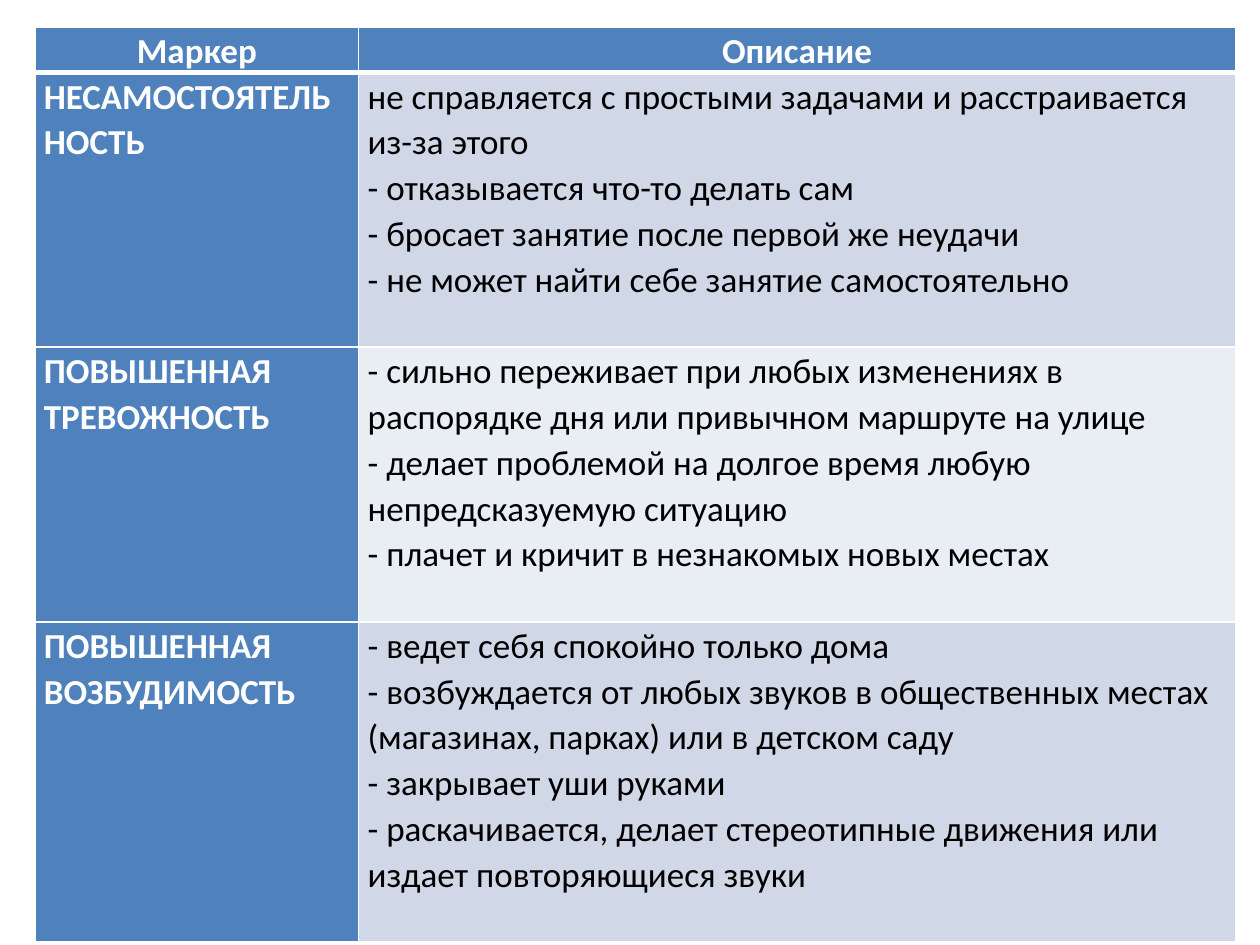
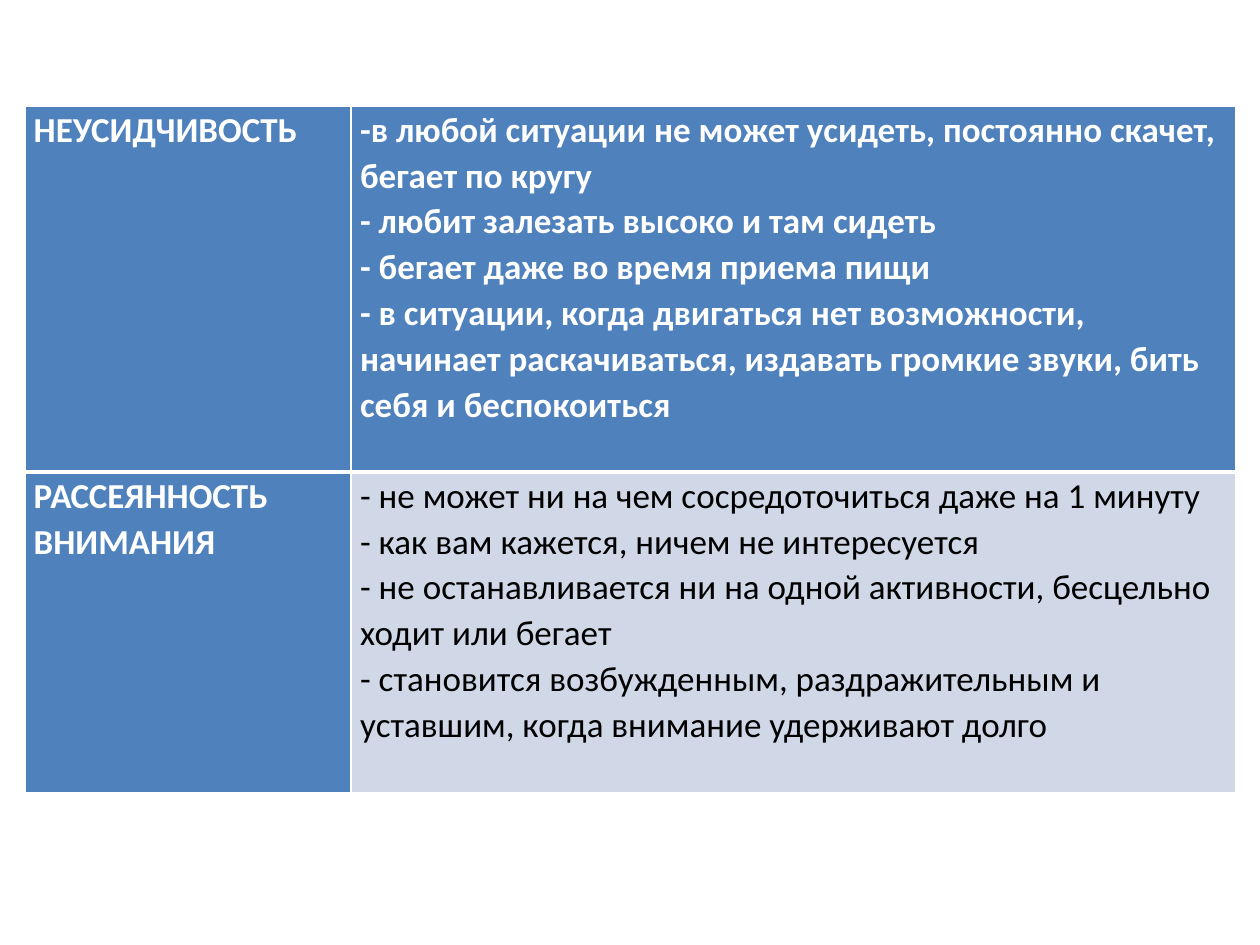
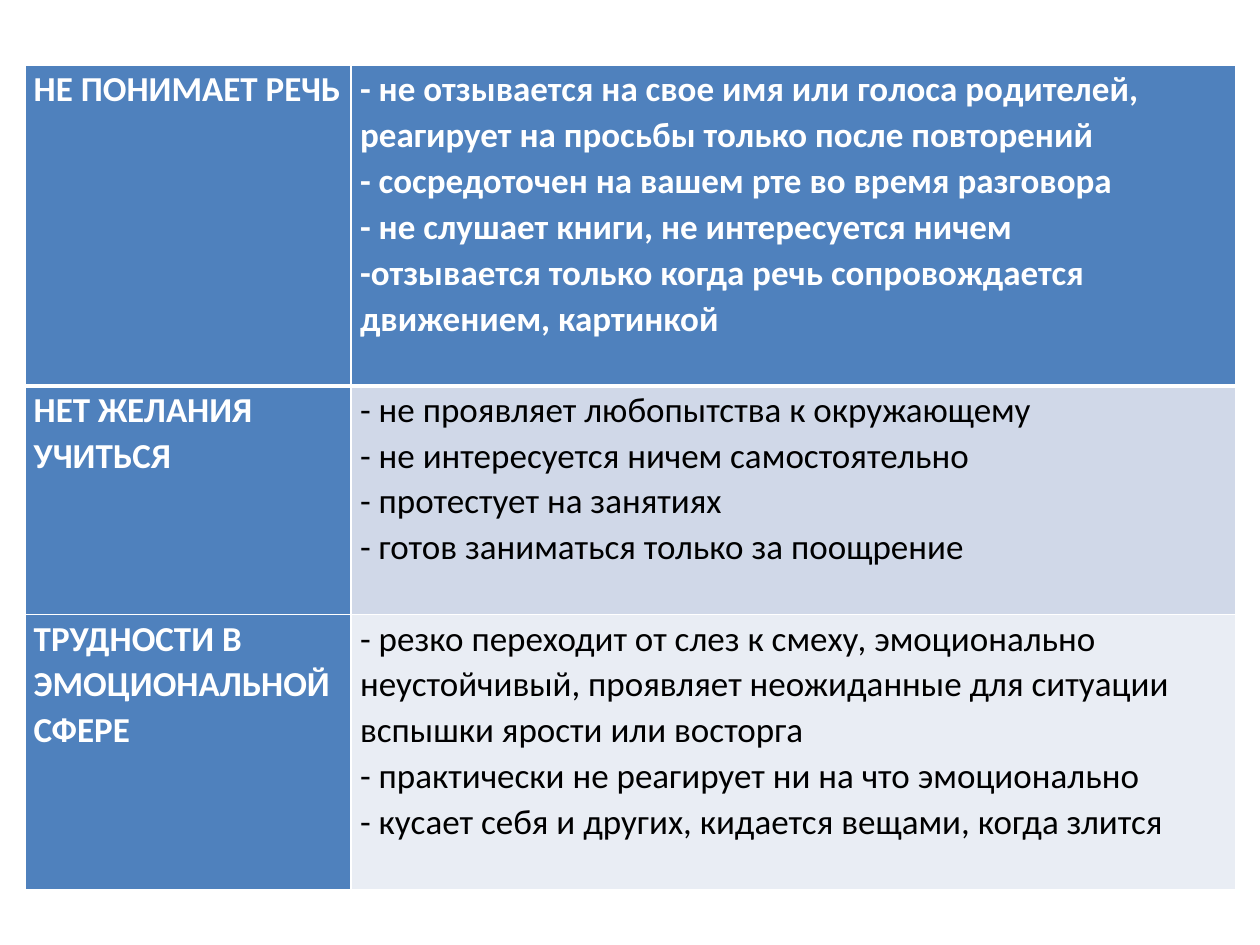
from pptx import Presentation
from pptx import util as u
from pptx.dml import color
from pptx.enum import text
from pptx.oxml import parse_xml
from pptx.oxml import ns

COLORS = {
    "header": "4F81BD",
    "odd": "D0D8E8",
    "even": "E9EDF4",
    "light": "FFFFFF",
    "dark": "000000",
}
FONT = "Calibri"
FONT_SIZE = 20
LINE_SPACING = 1.07
LINE_HEIGHT = 26.15
SIDE_MARGIN = 5.1
THIN, THICK = 1, 3

HEADINGS = (1, "Маркер", ["Описание"])
FIRST_MARKERS = [
    (6, "НЕСАМОСТОЯТЕЛЬНОСТЬ", [
        "не справляется с простыми задачами и расстраивается из-за этого",
        "- отказывается что-то делать сам",
        "- бросает занятие после первой же неудачи",
        "- не может найти себе занятие самостоятельно",
    ]),
    (6, "ПОВЫШЕННАЯ ТРЕВОЖНОСТЬ", [
        "- сильно переживает при любых изменениях в распорядке дня или привычном маршруте на улице",
        "- делает проблемой на долгое время любую непредсказуемую ситуацию",
        "- плачет и кричит в незнакомых новых местах",
    ]),
    (7, "ПОВЫШЕННАЯ ВОЗБУДИМОСТЬ", [
        "- ведет себя спокойно только дома",
        "- возбуждается от любых звуков в общественных местах (магазинах, парках) или в детском саду",
        "- закрывает уши руками",
        "- раскачивается, делает стереотипные движения или издает повторяющиеся звуки",
    ]),
]
ATTENTION_MARKERS = [
    (8, "НЕУСИДЧИВОСТЬ", [
        "-в любой ситуации не может усидеть, постоянно скачет, бегает по кругу",
        "- любит залезать высоко и там сидеть",
        "- бегает даже во время приема пищи",
        "- в ситуации, когда двигаться нет возможности, начинает раскачиваться, "
        "издавать громкие звуки, бить себя и беспокоиться",
    ]),
    (7, "РАССЕЯННОСТЬ ВНИМАНИЯ", [
        "- не может ни на чем сосредоточиться даже на 1 минуту",
        "- как вам кажется, ничем не интересуется",
        "- не останавливается ни на одной активности, бесцельно ходит или бегает",
        "- становится возбужденным, раздражительным и уставшим, когда внимание удерживают долго",
    ]),
]
SPEECH_MARKERS = [
    (7, "НЕ ПОНИМАЕТ РЕЧЬ", [
        "- не отзывается на свое имя или голоса родителей, реагирует на просьбы только после повторений",
        "- сосредоточен на вашем рте во время разговора",
        "- не слушает книги, не интересуется ничем",
        "-отзывается только когда речь сопровождается движением, картинкой",
    ]),
    (5, "НЕТ ЖЕЛАНИЯ УЧИТЬСЯ", [
        "- не проявляет любопытства к окружающему",
        "- не интересуется ничем самостоятельно",
        "- протестует на занятиях",
        "- готов заниматься только за поощрение",
    ]),
    (6, "ТРУДНОСТИ В ЭМОЦИОНАЛЬНОЙ СФЕРЕ", [
        "- резко переходит от слез к смеху, эмоционально неустойчивый, "
        "проявляет неожиданные для ситуации вспышки ярости или восторга",
        "- практически не реагирует ни на что эмоционально",
        "- кусает себя и других, кидается вещами, когда злится",
    ]),
]


def rgb(name):
    return color.RGBColor.from_string(COLORS[name])


def set_borders(cell, bottom):
    properties = cell._tc.get_or_add_tcPr()
    for side, width in (("L", THIN), ("R", THIN), ("T", THIN), ("B", bottom)):
        properties.append(parse_xml(
            f'<a:ln{side} {ns.nsdecls("a")} w="{u.Pt(width)}"><a:solidFill>'
            f'<a:srgbClr val="{COLORS["light"]}"/></a:solidFill></a:ln{side}>'))


def fill_cell(cell, lines, fill, strong, align, bottom):
    set_borders(cell, bottom)
    cell.fill.solid()
    cell.fill.fore_color.rgb = rgb(fill)
    cell.margin_left = cell.margin_right = u.Pt(SIDE_MARGIN)
    cell.margin_top = cell.margin_bottom = 0
    cell.text_frame.text = "\n".join(lines)
    for para in cell.text_frame.paragraphs:
        para.alignment = align
        para.line_spacing = LINE_SPACING
        for span in para.runs:
            span.font.name = FONT
            span.font.size = u.Pt(FONT_SIZE)
            span.font.bold = strong
            span.font.color.rgb = rgb("light" if strong else "dark")


def add_marker_table(deck, markers, left, top, widths):
    page = deck.slides.add_slide(deck.slide_layouts[6])
    height = LINE_HEIGHT * sum(line_count for line_count, _, _ in markers)
    table = page.shapes.add_table(
        len(markers), 2, u.Pt(left), u.Pt(top), u.Pt(sum(widths)), u.Pt(height)).table
    for column, width in zip(table.columns, widths):
        column.width = u.Pt(width)
    for index, (line_count, marker, description) in enumerate(markers):
        table.rows[index].height = u.Pt(LINE_HEIGHT * line_count)
        is_header = index == 0
        band = "header" if is_header else "odd" if index % 2 else "even"
        bottom = THICK if is_header else THIN
        is_heading = markers[index] is HEADINGS
        align = text.PP_ALIGN.CENTER if is_heading else text.PP_ALIGN.LEFT
        fill_cell(table.cell(index, 0), [marker], "header", True, align, bottom)
        fill_cell(table.cell(index, 1), description, band, is_header, align, bottom)


def main():
    deck = Presentation()
    deck.slide_width, deck.slide_height = u.Pt(720), u.Pt(540)
    add_marker_table(deck, [HEADINGS] + FIRST_MARKERS, 20, 15.3, (185, 501))
    add_marker_table(deck, ATTENTION_MARKERS, 14.2, 60.5, (186.5, 505.5))
    add_marker_table(deck, SPEECH_MARKERS, 14.2, 37.5, (186.5, 505.5))
    deck.save("out.pptx")


if __name__ == "__main__":
    main()
